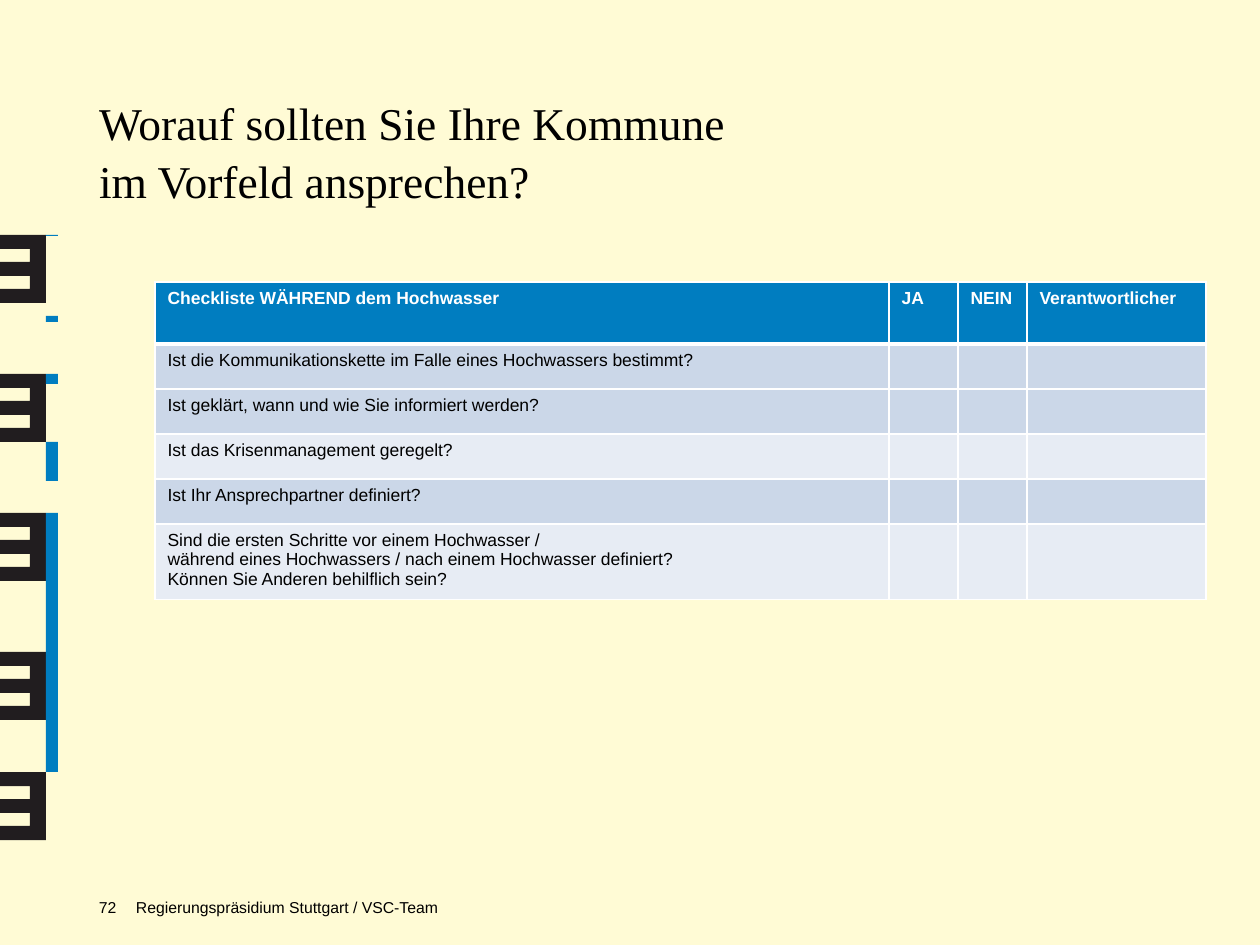
from lxml import etree
from pptx import Presentation
from pptx.dml.color import RGBColor
from pptx.enum.shapes import MSO_SHAPE
from pptx.enum.text import MSO_ANCHOR, PP_ALIGN
from pptx.oxml.ns import qn
from pptx.util import Pt

RECT = MSO_SHAPE.RECTANGLE
TOP, MIDDLE = MSO_ANCHOR.TOP, MSO_ANCHOR.MIDDLE
LEFT = PP_ALIGN.LEFT
PX = 914400 / 126


class Theme:
    paper = RGBColor.from_string("FFFBD5")
    blue = RGBColor.from_string("007DC0")
    dark = RGBColor.from_string("211D1F")
    mid = RGBColor.from_string("CBD7E8")
    pale = RGBColor.from_string("E7ECF4")
    black = RGBColor.from_string("000000")
    white = RGBColor.from_string("FFFFFF")
    serif, sans = "Times New Roman", "Arial"
    head, body, foot = 26, 10, 9


def px(*vals):
    return [round(val * PX) for val in vals]


def write(frame, text, size, face, color, bold=False):
    """Fill a text frame; an empty one still gets its type size."""
    frame.text = text
    for para in frame.paragraphs:
        para.alignment = LEFT
        for run in para.runs:
            font = run.font
            font.size, font.name, font.bold = Pt(size), face, bold
            font.color.rgb = color
        if not para.runs:
            etree.SubElement(para._p, qn("a:endParaRPr"), sz=str(size * 100))


deck = Presentation()
deck.slide_width, deck.slide_height = px(1260, 945)
slide = deck.slides.add_slide(deck.slide_layouts[5])
slide.background.fill.solid()
slide.background.fill.fore_color.rgb = Theme.paper
shapes = slide.shapes

# Side ornament: black combs and blue bars
COMB = [(0, 14), (30, 14), (30, 27), (0, 27), (0, 41), (30, 41),
        (30, 54), (0, 54), (0, 68), (46, 68), (46, 0)]
marks = []
for top in (235, 374, 513, 652, 772):
    pen = shapes.build_freeform(0, top, scale=PX)
    pen.add_line_segments([(x, top + y) for x, y in COMB], close=True)
    marks.append((pen.convert_to_shape(), Theme.dark))
for top, high in ((235, 1), (316, 6), (374, 10), (442, 39), (513, 259)):
    marks.append((shapes.add_shape(RECT, *px(46, top, 12, high)), Theme.blue))
for mark, color in marks:
    mark.shadow.inherit = False
    mark.fill.solid()
    mark.fill.fore_color.rgb = color
    mark.line.fill.background()

# Title and footer
title = shapes.title
title.left, title.top, title.width, title.height = px(99, 91, 1116, 118)
labels = [(title, "Worauf sollten Sie Ihre Kommune\vim Vorfeld ansprechen?",
           Theme.head, Theme.serif, MIDDLE)]
for left, wide, text in ((136, 854, "Regierungspräsidium Stuttgart / VSC-Team"),
                         (99, 37, "72")):
    box = shapes.add_textbox(*px(left, 898, wide, 35))
    labels.append((box, text, Theme.foot, Theme.sans, TOP))
for box, text, size, face, anchor in labels:
    frame = box.text_frame
    frame.margin_left = frame.margin_right = 0
    frame.margin_top = frame.margin_bottom = 0
    frame.word_wrap = True
    frame.vertical_anchor = anchor
    write(frame, text, size, face, Theme.black)
title.text_frame.paragraphs[0].line_spacing = 1.05

# Checklist
HEADS = ["Checkliste WÄHREND dem Hochwasser", "JA", "NEIN", "Verantwortlicher"]
ASKS = [
    ("Ist die Kommunikationskette im Falle eines Hochwassers bestimmt?", Theme.mid),
    ("Ist geklärt, wann und wie Sie informiert werden?", Theme.mid),
    ("Ist das Krisenmanagement geregelt?", Theme.pale),
    ("Ist Ihr Ansprechpartner definiert?", Theme.mid),
    ("Sind die ersten Schritte vor einem Hochwasser /\v"
     "während eines Hochwassers / nach einem Hochwasser definiert?\v"
     "Können Sie Anderen behilflich sein?", Theme.pale),
]
rows = [(HEADS, Theme.blue)] + [([ask, "", "", ""], fill) for ask, fill in ASKS]
WIDE = (734, 69, 69, 179)
HIGH = [62] + [45] * len(ASKS)
grid = shapes.add_table(len(rows), len(WIDE), *px(155, 282, sum(WIDE), sum(HIGH))).table
for col, wide in zip(grid.columns, px(*WIDE)):
    col.width = wide
for row, high in zip(grid.rows, px(*HIGH)):
    row.height = high

for r, (texts, fill) in enumerate(rows):
    ink = Theme.black if r else Theme.white
    edges = {"L": 1, "R": 1, "T": 3 if r == 1 else 1, "B": 1 if r else 3}
    for c, text in enumerate(texts):
        cell = grid.cell(r, c)
        cell.fill.solid()
        cell.fill.fore_color.rgb = fill
        write(cell.text_frame, text, Theme.body, Theme.sans, ink, bold=r == 0)
        props = cell._tc.get_or_add_tcPr()
        for spot, (side, width) in enumerate(edges.items()):
            line = etree.Element(qn("a:ln" + side), w=str(Pt(width)))
            solid = etree.SubElement(line, qn("a:solidFill"))
            etree.SubElement(solid, qn("a:srgbClr"), val=str(Theme.white))
            props.insert(spot, line)

deck.save("out.pptx")
